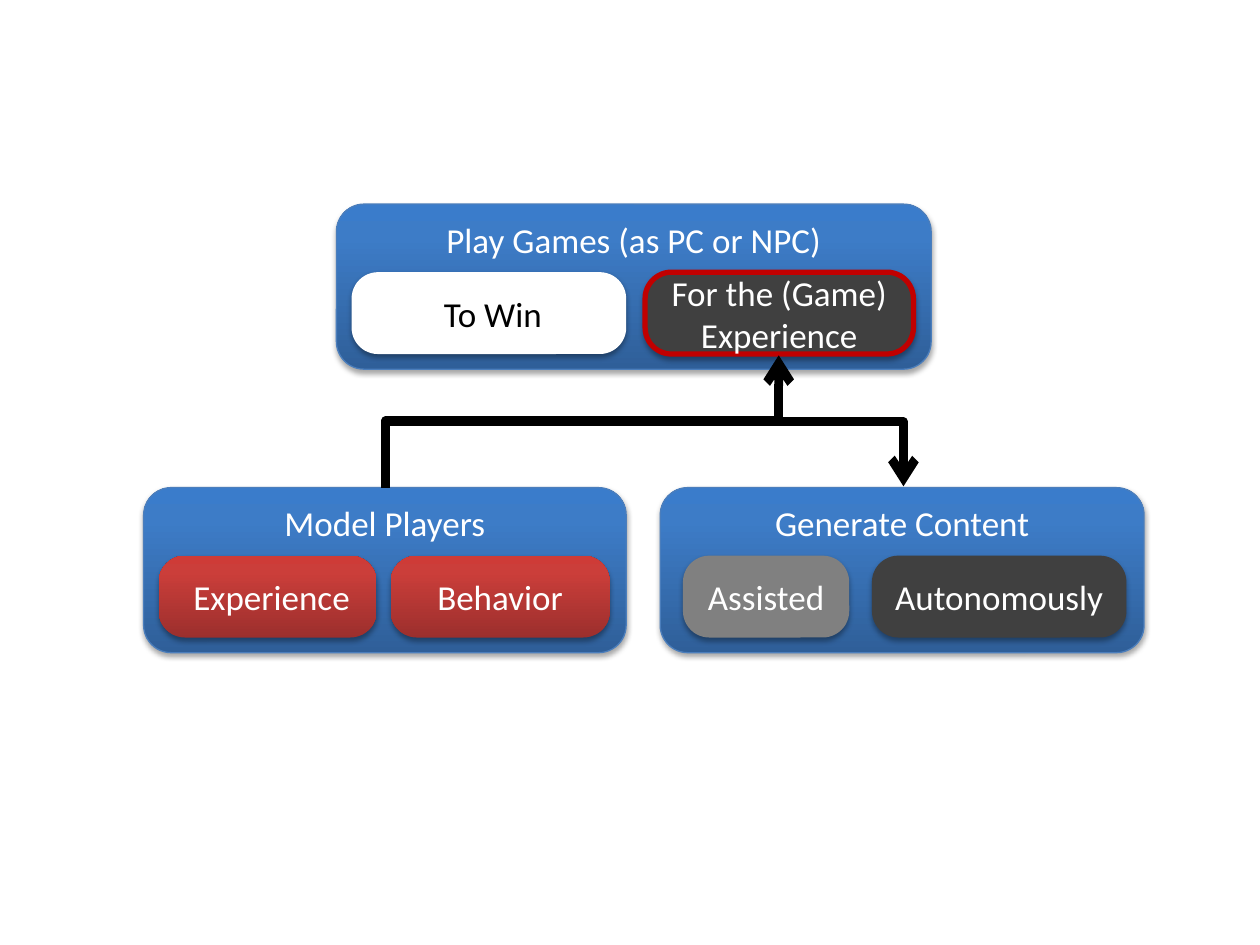
from lxml import etree
from pptx import Presentation
from pptx.dml.color import RGBColor
from pptx.enum.shapes import MSO_CONNECTOR, MSO_SHAPE
from pptx.enum.text import MSO_ANCHOR, PP_ALIGN
from pptx.oxml import parse_xml
from pptx.oxml.ns import nsdecls, qn
from pptx.util import Inches, Pt

BLUE = ("2F5F99", "3D7CC7", "3A7CCB")
RED = ("9C2F2D", "CB3E3A", "CE3B37")
DARK, GRAY, WHITE, BLACK = "404040", "808080", "FFFFFF", "000000"
PANEL_H, CHIP_H, CHIP_DROP = 1.31, 0.65, 0.54
TOP_Y, BOTTOM_Y, BUS_Y = 1.62, 3.87, 3.34


def rgb(color):
    return RGBColor.from_string(color)


def add_text(shape, text, size=20, color=WHITE, anchor=MSO_ANCHOR.MIDDLE):
    tf = shape.text_frame
    tf.word_wrap = True
    tf.vertical_anchor = anchor
    p = tf.paragraphs[0]
    p.alignment = PP_ALIGN.CENTER
    r = p.add_run()
    r.text = text
    r.font.name = "Calibri"
    r.font.size = Pt(size)
    r.font.color.rgb = rgb(color)


def set_fill(shape, fill):
    """Fill with one colour, or with three shades from bottom to top."""
    shape.fill.solid()
    if isinstance(fill, str):
        shape.fill.fore_color.rgb = rgb(fill)
        return
    stops = "".join(
        f'<a:gs pos="{pos}"><a:srgbClr val="{shade}"/></a:gs>'
        for pos, shade in zip((0, 80000, 100000), fill))
    spPr = shape.element.spPr
    spPr.replace(spPr.find(qn("a:solidFill")), parse_xml(
        f'<a:gradFill {nsdecls("a")} rotWithShape="1"><a:gsLst>{stops}</a:gsLst>'
        '<a:lin ang="16200000" scaled="0"/></a:gradFill>'))


def add_shadow(shape):
    shape.shadow.inherit = False
    effects = shape.element.spPr.find(qn("a:effectLst"))
    effects.append(parse_xml(
        f'<a:outerShdw {nsdecls("a")} blurRad="{Pt(3.1)}" dist="{Pt(1.8)}" '
        'dir="5400000" rotWithShape="0"><a:srgbClr val="000000">'
        '<a:alpha val="35000"/></a:srgbClr></a:outerShdw>'))


def add_box(s, x, y, w, h, fill, line=None, line_width=0.75, radius=0.167):
    box = s.shapes.add_shape(MSO_SHAPE.ROUNDED_RECTANGLE,
                             Inches(x), Inches(y), Inches(w), Inches(h))
    box.adjustments[0] = radius
    set_fill(box, fill)
    if line:
        box.line.color.rgb = rgb(line)
        box.line.width = Pt(line_width)
    else:
        box.line.fill.background()
    add_shadow(box)
    return box


def add_panel(s, x, y, w, title, chips):
    """Place a titled panel; each chip is (offset, width, text, fill, format)."""
    panel = add_box(s, x, y, w, PANEL_H, BLUE, line="4B7EBC")
    add_text(panel, title, anchor=MSO_ANCHOR.TOP)
    for dx, chip_w, text, fill, look in chips:
        chip = add_box(s, x + dx, y + CHIP_DROP, chip_w, CHIP_H, fill,
                       line=look.get("line"), line_width=3, radius=0.323)
        add_text(chip, text, color=look.get("color", WHITE))


def add_elbow_arrow(s, x1, y1, x2, y2, bus_y):
    """Go from the start up to bus_y, across, and vertically to the end."""
    rise, run = y1 - y2, x2 - x1
    left, top = (x1 + x2 - rise) / 2, (y1 + y2 - run) / 2
    c = s.shapes.add_connector(MSO_CONNECTOR.ELBOW, Inches(left), Inches(top),
                               Inches(left + rise), Inches(top + run))
    c.line.color.rgb = rgb(BLACK)
    c.line.width = Pt(5)
    spPr = c.element.spPr
    for name, value in (("rot", "5400000"), ("flipH", "1"), ("flipV", "1")):
        spPr.find(qn("a:xfrm")).set(name, value)
    guides = spPr.find(qn("a:prstGeom")).get_or_add_avLst()
    bend = round((y1 - bus_y) / rise * 100000)
    etree.SubElement(guides, qn("a:gd"), name="adj1", fmla=f"val {bend}")
    etree.SubElement(spPr.find(qn("a:ln")), qn("a:tailEnd"), type="arrow")
    etree.SubElement(spPr, qn("a:effectLst"))


def main():
    prs = Presentation()
    prs.slide_width, prs.slide_height = Inches(10), Inches(7.5)
    s = prs.slides.add_slide(prs.slide_layouts[6])

    add_panel(s, 1.14, BOTTOM_Y, 3.83, "Model Players", [
        (0.12, 1.73, " Experience", RED, {}),
        (1.96, 1.74, "Behavior", RED, {})])
    add_panel(s, 5.24, BOTTOM_Y, 3.84, "Generate Content", [
        (0.18, 1.32, "Assisted", GRAY, {}),
        (1.68, 2.02, "Autonomously", DARK, {})])
    add_panel(s, 2.67, TOP_Y, 4.72, "Play Games (as PC or NPC)", [
        (0.12, 2.18, " To Win", WHITE, {"color": BLACK}),
        (2.45, 2.13, "For the (Game) Experience", DARK, {"line": "C00000"})])

    add_elbow_arrow(s, 3.06, BOTTOM_Y, 6.18, 2.82, BUS_Y)
    add_elbow_arrow(s, 3.06, BOTTOM_Y, 7.17, 3.86, BUS_Y)
    prs.save("out.pptx")


if __name__ == "__main__":
    main()
